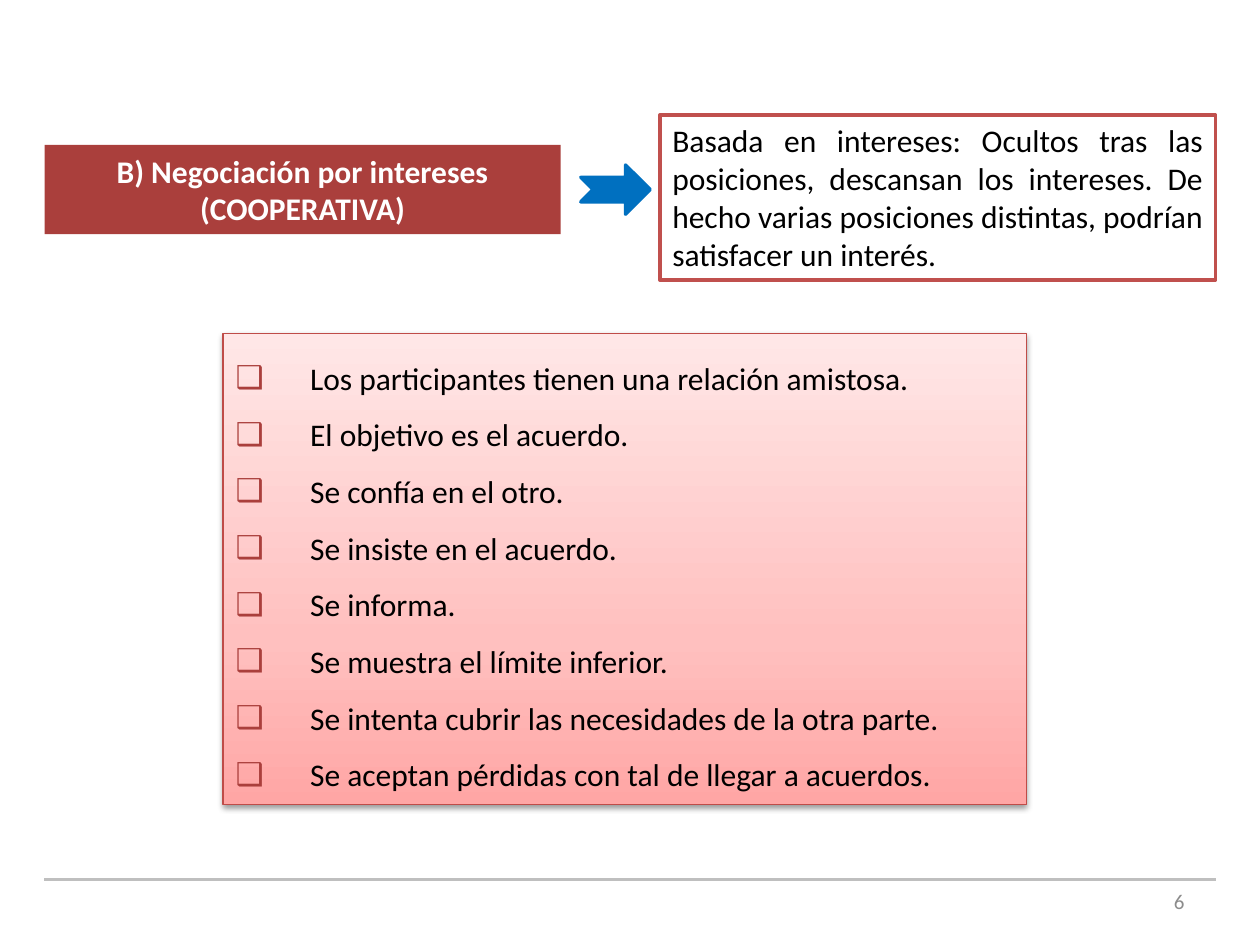
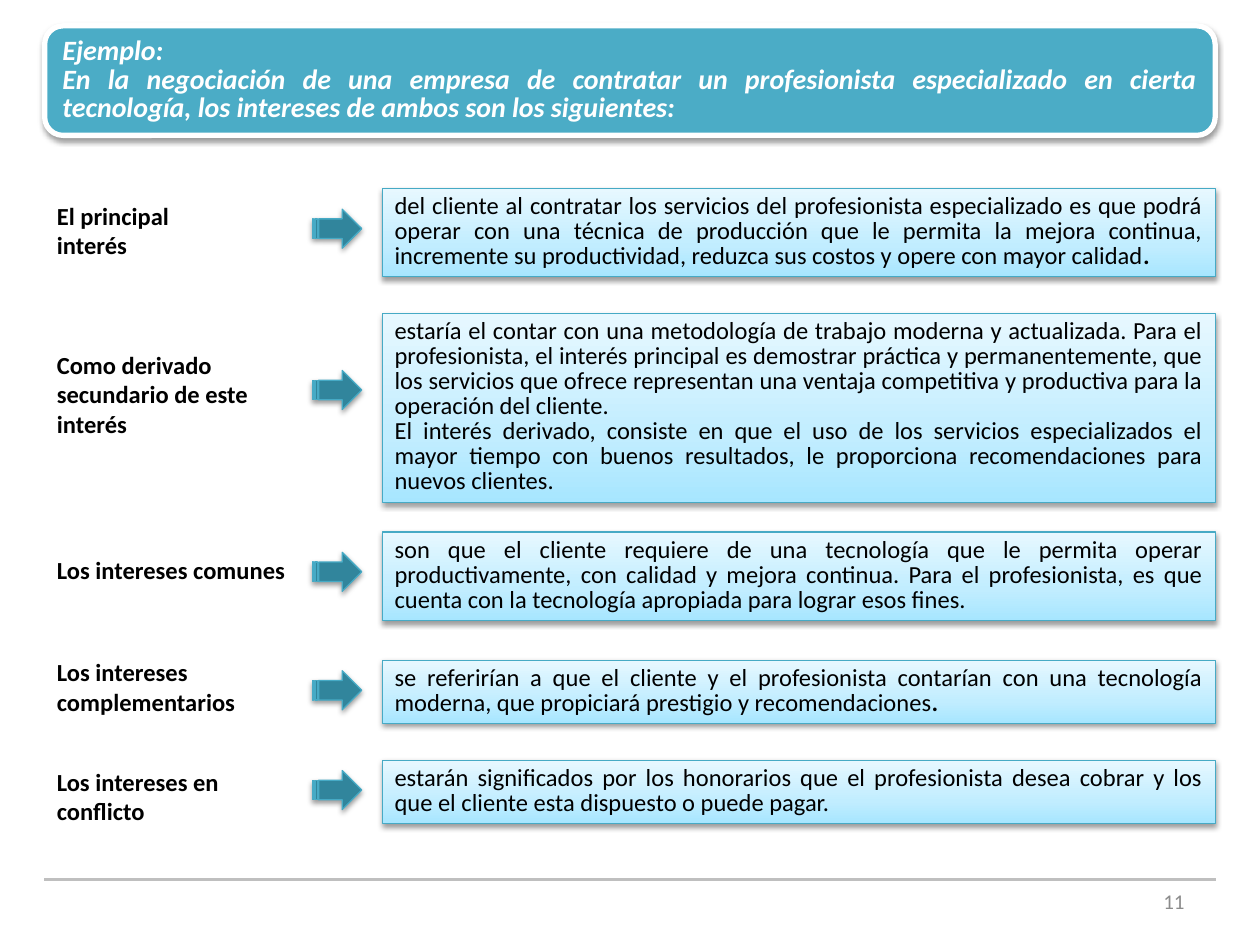
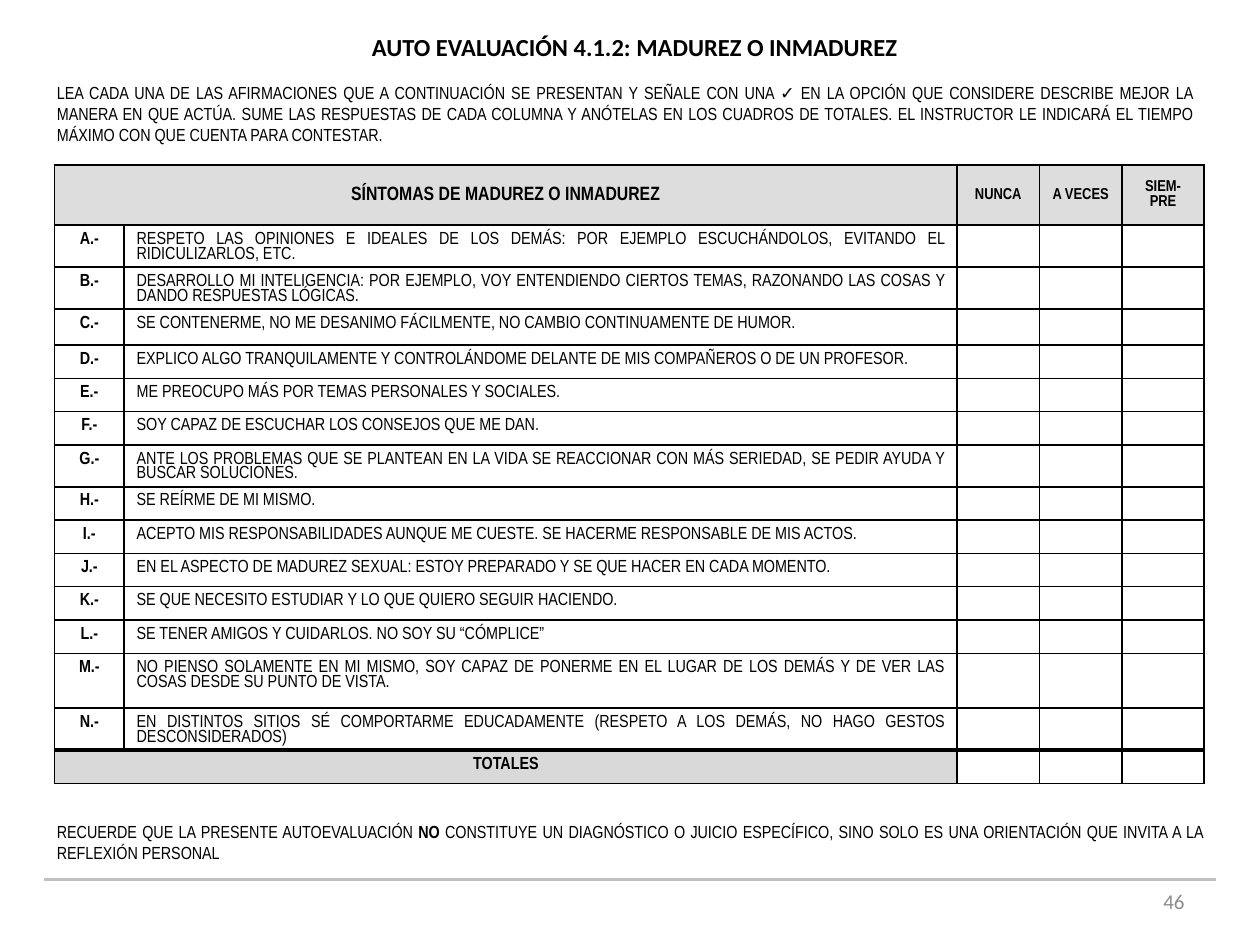
from collections import namedtuple
from dataclasses import dataclass

from lxml.etree import SubElement
from pptx import Presentation
from pptx.dml.color import RGBColor
from pptx.enum.shapes import MSO_CONNECTOR, MSO_SHAPE
from pptx.enum.text import MSO_ANCHOR, MSO_AUTO_SIZE, PP_ALIGN
from pptx.oxml.ns import qn
from pptx.util import Pt

Box = namedtuple("Box", "x y w h")
LEFT, MID, RIGHT, FULL = PP_ALIGN.LEFT, PP_ALIGN.CENTER, PP_ALIGN.RIGHT, PP_ALIGN.JUSTIFY


@dataclass(frozen=True)
class Theme:
    sans: str = "Calibri"
    slim: str = "Arial Narrow"
    ink: str = "000000"
    white: str = "FFFFFF"
    rule: str = "BFBFBF"
    mute: str = "8C8C8C"
    brick: str = "AA3F3C"
    red: str = "C0504D"
    rose: str = "BF4C48"
    blue: str = "0070C0"
    aqua: str = "4BACC6"
    teal: str = "31859C"
    edge: str = "46AAC5"
    head: str = "DDDDDD"
    foot: str = "D9D9D9"
    blush: tuple = ("FFA6A5", "FFC0BF", "FFE7E7")
    sky: tuple = ("A7E6FF", "C1EDFF", "E7F8FF")
    big: float = 18
    lead: float = 16
    body: float = 14
    page: float = 12
    cap: float = 11
    small: float = 10
    tiny: float = 9
    tight: float = 8.4


T = Theme()


# Shared helpers
def rgb(code):
    return RGBColor.from_string(code)


def write(frame, paras, size=T.body, font=T.sans, color=T.ink, bold=False,
          italic=False, align=LEFT, lead=None, anchor=MSO_ANCHOR.TOP, bullet=None):
    """Fill a frame; a paragraph is a string or a list of strings and (string, bold, italic)."""
    for i, para in enumerate(paras):
        p = frame.paragraphs[0] if i == 0 else frame.add_paragraph()
        if bullet:
            mark(p, *bullet)
        p.alignment = align
        p.space_before = p.space_after = Pt(0)
        if lead:
            p.line_spacing = lead
        for part in [para] if isinstance(para, str) else para:
            words, b, it = (part, bold, italic) if isinstance(part, str) else part
            run = p.add_run()
            run.text = words
            run.font.size, run.font.name = Pt(size), font
            run.font.bold, run.font.italic = b, it
            run.font.color.rgb = rgb(color)
    frame.vertical_anchor = anchor


def mark(p, char, color, indent):
    props = p._p.get_or_add_pPr()
    props.set("marL", str(Pt(indent)))
    props.set("indent", str(-Pt(indent)))
    SubElement(SubElement(props, qn("a:buClr")), qn("a:srgbClr"), val=color)
    SubElement(props, qn("a:buChar"), char=char)


def paint(shape, fill, line=None, width=0.75, shade=False):
    """Set a plain fill or a three-step gradient, the outline and the shadow."""
    if isinstance(fill, tuple):
        shape.fill.gradient()
        grad = shape.element.spPr.find(qn("a:gradFill"))
        for child in list(grad):
            grad.remove(child)
        stops = SubElement(grad, qn("a:gsLst"))
        for pos, code in zip((0, 35000, 100000), fill):
            stop = SubElement(stops, qn("a:gs"), pos=str(pos))
            SubElement(stop, qn("a:srgbClr"), val=code)
        SubElement(grad, qn("a:lin"), ang="16200000", scaled="0")
    else:
        shape.fill.solid()
        shape.fill.fore_color.rgb = rgb(fill)
    if line:
        shape.line.color.rgb = rgb(line)
        shape.line.width = Pt(width)
    else:
        shape.line.fill.background()
    shape.shadow.inherit = False
    if shade:
        effects = shape.element.spPr.find(qn("a:effectLst"))
        cast = SubElement(effects, qn("a:outerShdw"), blurRad=str(Pt(3.1)),
                          dist=str(Pt(1.6)), dir="5400000", rotWithShape="0")
        tone = SubElement(cast, qn("a:srgbClr"), val=T.ink)
        SubElement(tone, qn("a:alpha"), val="38000")


def draw(slide, kind, box, *args, **style):
    shape = slide.shapes.add_shape(kind, *map(Pt, box))
    paint(shape, *args, **style)
    shape.text_frame.word_wrap = True
    return shape


def place(holder, box):
    holder.left, holder.top, holder.width, holder.height = map(Pt, box)
    holder.text_frame.word_wrap = True
    holder.text_frame.auto_size = MSO_AUTO_SIZE.NONE
    return holder.text_frame


def label(slide, box, paras, **style):
    frame = slide.shapes.add_textbox(*map(Pt, box)).text_frame
    frame.word_wrap = True
    write(frame, paras, **style)


def start(deck, layout, number):
    """Add a slide with the footer rule and the page number."""
    slide = deck.slides.add_slide(deck.slide_layouts[layout])
    rule = slide.shapes.add_connector(MSO_CONNECTOR.STRAIGHT, Pt(25.2), Pt(502.5),
                                      Pt(694.8), Pt(502.5))
    rule.line.color.rgb = rgb(T.rule)
    rule.line.width = Pt(2)
    SubElement(rule.element.spPr, qn("a:effectLst"))
    label(slide, Box(516.2, 500.4, 167.8, 28.8), [str(number)], size=T.page,
          color=T.mute, align=RIGHT, anchor=MSO_ANCHOR.MIDDLE)
    return slide


# Slide 1: negotiation by interests
TRAITS = [
    "Los participantes tienen una relación amistosa.",
    "El objetivo es el acuerdo.",
    "Se confía en el otro.",
    "Se insiste en el acuerdo.",
    "Se informa.",
    "Se muestra el límite inferior.",
    "Se intenta cubrir las necesidades de la otra parte.",
    "Se aceptan pérdidas con tal de llegar a acuerdos.",
]
BASIS = ("Basada en intereses: Ocultos tras las posiciones, descansan los intereses. "
         "De hecho varias posiciones distintas, podrían satisfacer un interés.")


def concept(slide, box):
    """Title, arrow and definition side by side."""
    title = slide.shapes.title
    frame = place(title, Box(box.x + 0.3, box.y + 17, 294.8, 51))
    paint(title, T.brick)
    write(frame, ["B) Negociación por intereses", "(COOPERATIVA)"], size=T.big,
          color=T.white, bold=True, align=MID, anchor=MSO_ANCHOR.MIDDLE)
    draw(slide, MSO_SHAPE.NOTCHED_RIGHT_ARROW,
         Box(box.x + 306.7, box.y + 28.5, 39.6, 28.1), T.blue, T.blue, 2)
    wide = 317.5
    note = draw(slide, MSO_SHAPE.RECTANGLE,
                Box(box.x + box.w - wide, box.y, wide, box.h), T.white, T.red, 2)
    write(note.text_frame, [BASIS], size=T.big, align=FULL)


def traits(slide, box):
    body = slide.placeholders[1]
    frame = place(body, box)
    paint(body, T.blush, T.rose, shade=True)
    write(frame, TRAITS, size=T.big, lead=1.5, bullet=("❑", T.brick, 42.5))


# Slide 2: example of interests
Row = namedtuple("Row", "top high name drop wide arrow paras")
ROWS = [
    Row(107.8, 50.4, "El principal interés", 3.4, 116.6, 11.7,
        [["del cliente al contratar los servicios del profesionista especializado es que "
          "podrá operar con una técnica de producción que le permita la mejora continua, "
          "incremente su productividad, reduzca sus costos y opere con mayor calidad",
          (".", True, True)]]),
    Row(179.3, 108, "Como derivado secundario de este interés", 17.1, 136.1, 32.4,
        ["estaría el contar con una metodología de trabajo moderna y actualizada. Para el "
         "profesionista, el interés principal es demostrar práctica y permanentemente, que "
         "los servicios que ofrece representan una ventaja competitiva y productiva para la "
         "operación del cliente.",
         "El interés derivado, consiste en que el uso de los servicios especializados el "
         "mayor tiempo con buenos resultados, le proporciona recomendaciones para nuevos "
         "clientes."]),
    Row(304.1, 50.4, "Los intereses comunes", 9.8, 193, 11.5,
        ["son que el cliente requiere de una tecnología que le permita operar "
         "productivamente, con calidad y mejora continua. Para el profesionista, es que "
         "cuenta con la tecnología apropiada para lograr esos fines."]),
    Row(377.3, 36, "Los intereses complementarios", -5.2, 147.6, 6,
        [["se referirían a que el cliente y el profesionista contarían con una tecnología "
          "moderna, que propiciará prestigio y recomendaciones", (".", True, True)]]),
    Row(434.5, 36, "Los intereses en conflicto", 0, 146.2, 5.8,
        ["estarán significados por los honorarios que el profesionista desea cobrar y los "
         "que el cliente esta dispuesto o puede pagar."]),
]


def banner(slide, box):
    draw(slide, MSO_SHAPE.ROUNDED_RECTANGLE, box, T.aqua, T.white, 3, shade=True)
    title = slide.shapes.title
    title.element.getparent().append(title.element)
    inset = 3
    frame = place(title, Box(box.x + inset, box.y, box.w - 2 * inset, box.h))
    write(frame, ["Ejemplo:", "En la negociación de una empresa de contratar un "
                  "profesionista especializado en cierta tecnología, los intereses de "
                  "ambos son los siguientes:"],
          size=T.lead, color=T.white, bold=True, italic=True, align=FULL, lead=0.85,
          anchor=MSO_ANCHOR.MIDDLE)


def interest(slide, box, row):
    """Name, arrow and explanation in one row."""
    label(slide, Box(box.x, box.y + row.drop, row.wide, 41), [row.name], bold=True)
    draw(slide, MSO_SHAPE.STRIPED_RIGHT_ARROW,
         Box(box.x + 153.2, box.y + row.arrow, 28.1, 22.3), T.teal, T.edge, shade=True)
    text = draw(slide, MSO_SHAPE.RECTANGLE,
                Box(box.x + 193, box.y, box.w - 193, box.h), T.sky, T.edge, shade=True)
    write(text.text_frame, row.paras, align=FULL, lead=0.85)


# Slide 3: self-assessment
SIGNS = [
    (24, "RESPETO LAS OPINIONES E IDEALES DE LOS DEMÁS: POR EJEMPLO ESCUCHÁNDOLOS, "
         "EVITANDO EL RIDICULIZARLOS, ETC."),
    (24, "DESARROLLO MI INTELIGENCIA: POR EJEMPLO, VOY ENTENDIENDO CIERTOS TEMAS, "
         "RAZONANDO LAS COSAS Y DANDO RESPUESTAS LÓGICAS."),
    (20.5, "SE CONTENERME, NO ME DESANIMO FÁCILMENTE, NO CAMBIO CONTINUAMENTE DE HUMOR."),
    (18, "EXPLICO ALGO TRANQUILAMENTE Y CONTROLÁNDOME DELANTE DE MIS COMPAÑEROS O DE UN "
         "PROFESOR."),
    (18, "ME PREOCUPO MÁS POR TEMAS PERSONALES Y SOCIALES."),
    (18, "SOY CAPAZ DE ESCUCHAR LOS CONSEJOS QUE ME DAN."),
    (24, "ANTE LOS PROBLEMAS QUE SE PLANTEAN EN LA VIDA SE REACCIONAR CON MÁS SERIEDAD, "
         "SE PEDIR AYUDA Y BUSCAR SOLUCIONES."),
    (18, "SE REÍRME DE MI MISMO."),
    (18, "ACEPTO MIS RESPONSABILIDADES AUNQUE ME CUESTE. SE HACERME RESPONSABLE DE MIS "
         "ACTOS."),
    (18, "EN EL ASPECTO DE MADUREZ SEXUAL: ESTOY PREPARADO Y SE QUE HACER EN CADA MOMENTO."),
    (18, "SE QUE NECESITO ESTUDIAR Y LO QUE QUIERO SEGUIR HACIENDO."),
    (18, "SE TENER AMIGOS Y CUIDARLOS. NO SOY SU “CÓMPLICE”"),
    (31.4, "NO PIENSO SOLAMENTE EN MI MISMO, SOY CAPAZ DE PONERME EN EL LUGAR DE LOS DEMÁS "
           "Y DE VER LAS COSAS DESDE SU PUNTO DE VISTA."),
    (24, "EN DISTINTOS SITIOS SÉ COMPORTARME EDUCADAMENTE (RESPETO A LOS DEMÁS, NO HAGO "
         "GESTOS DESCONSIDERADOS)"),
]


def cellset(cell, words, fill=None, top=1, base=1, middle=False, **style):
    """Give a cell its borders, fill and text."""
    props = cell._tc.get_or_add_tcPr()
    for side, width in zip("LRTB", (1, 1, top, base)):
        line = SubElement(props, qn("a:ln" + side), w=str(Pt(width)))
        tint = SubElement(line, qn("a:solidFill"))
        SubElement(tint, qn("a:srgbClr"), val=T.ink)
    if fill:
        cell.fill.solid()
        cell.fill.fore_color.rgb = rgb(fill)
    else:
        cell.fill.background()
    if middle:
        cell.vertical_anchor = MSO_ANCHOR.MIDDLE
    else:
        cell.margin_top, cell.margin_bottom = Pt(4.6), Pt(2.4)
    if words:
        write(cell.text_frame, [words], font=T.slim, **style)
    else:
        p = cell.text_frame.paragraphs[0]
        p.line_spacing = Pt(T.tight)
        SubElement(p._p, qn("a:endParaRPr"), sz=str(T.small * 100))


def survey(slide, box):
    last = len(SIGNS) + 1
    grid = slide.shapes.add_table(last + 1, 5, *map(Pt, box)).table
    grid.first_row = grid.horz_banding = False
    narrow = 47.1
    for col, width in zip(grid.columns, (39.7, box.w - 39.7 - 3 * narrow) + (narrow,) * 3):
        col.width = Pt(width)
    for row, high in zip(grid.rows, [34.4, *(high for high, _ in SIGNS), 18]):
        row.height = Pt(high)
    # Header
    heads = ["SÍNTOMAS DE MADUREZ O INMADUREZ", "", "NUNCA", "A VECES", "SIEM-PRE"]
    for c, words in enumerate(heads):
        cellset(grid.cell(0, c), words, T.head, middle=True,
                size=T.tiny if c else T.cap, bold=True, align=MID)
    # Statements
    for r, (_, words) in enumerate(SIGNS, 1):
        base = 2.25 if r == last - 1 else 1
        style = dict(base=base, size=T.small, lead=Pt(T.tight))
        cellset(grid.cell(r, 0), f"{chr(64 + r)}.-", bold=True, align=MID, **style)
        cellset(grid.cell(r, 1), words, align=FULL, **style)
        for c in range(2, 5):
            cellset(grid.cell(r, c), "", base=base)
    # Totals
    for c in range(5):
        cellset(grid.cell(last, c), "" if c else "TOTALES", T.foot if c < 2 else None,
                top=2.25, size=T.small, bold=True, align=MID, lead=Pt(T.tight))
    for r in (0, last):
        grid.cell(r, 0).merge(grid.cell(r, 1))


def guide(slide, box):
    """Title, instructions above the table and reminder below it."""
    frame = place(slide.shapes.title, Box(box.x + 5.8, box.y - 0.4, 663.1, 23.8))
    write(frame, ["AUTO EVALUACIÓN 4.1.2: MADUREZ O INMADUREZ"], bold=True, align=MID,
          anchor=MSO_ANCHOR.MIDDLE)
    style = dict(size=T.small, font=T.slim, align=FULL, lead=Pt(12))
    label(slide, Box(box.x, box.y + 28.1, 663.1, 48.2), [[
        "LEA CADA UNA DE LAS AFIRMACIONES QUE A CONTINUACIÓN SE PRESENTAN Y SEÑALE CON UNA ",
        ("✓", True, False),
        " EN LA OPCIÓN QUE CONSIDERE DESCRIBE MEJOR LA MANERA EN QUE ACTÚA. SUME LAS "
        "RESPUESTAS DE CADA COLUMNA Y ANÓTELAS EN LOS CUADROS DE TOTALES. EL INSTRUCTOR LE "
        "INDICARÁ EL TIEMPO MÁXIMO CON QUE CUENTA PARA CONTESTAR."]], **style)
    label(slide, Box(box.x, box.y + box.h - 31, box.w, 31), [[
        "RECUERDE QUE LA PRESENTE AUTOEVALUACIÓN ", ("NO", True, False),
        " CONSTITUYE UN DIAGNÓSTICO O JUICIO ESPECÍFICO, SINO SOLO ES UNA ORIENTACIÓN QUE "
        "INVITA A LA REFLEXIÓN PERSONAL"]], anchor=MSO_ANCHOR.MIDDLE, **style)


def main():
    deck = Presentation()
    deck.slide_width, deck.slide_height = Pt(720), Pt(540)

    slide = start(deck, 1, 6)
    concept(slide, Box(25.2, 65.8, 669.4, 94.3))
    traits(slide, Box(127.5, 190.5, 459.3, 269.3))

    slide = start(deck, 5, 11)
    banner(slide, Box(25.5, 14.8, 668.9, 62.6))
    for row in ROWS:
        interest(slide, Box(25.4, row.top, 669.1, row.high), row)

    slide = start(deck, 5, 46)
    guide(slide, Box(25.4, 15.1, 668.9, 481.7))
    survey(slide, Box(31.2, 94.3, 657, 345))

    deck.save("out.pptx")


if __name__ == "__main__":
    main()
